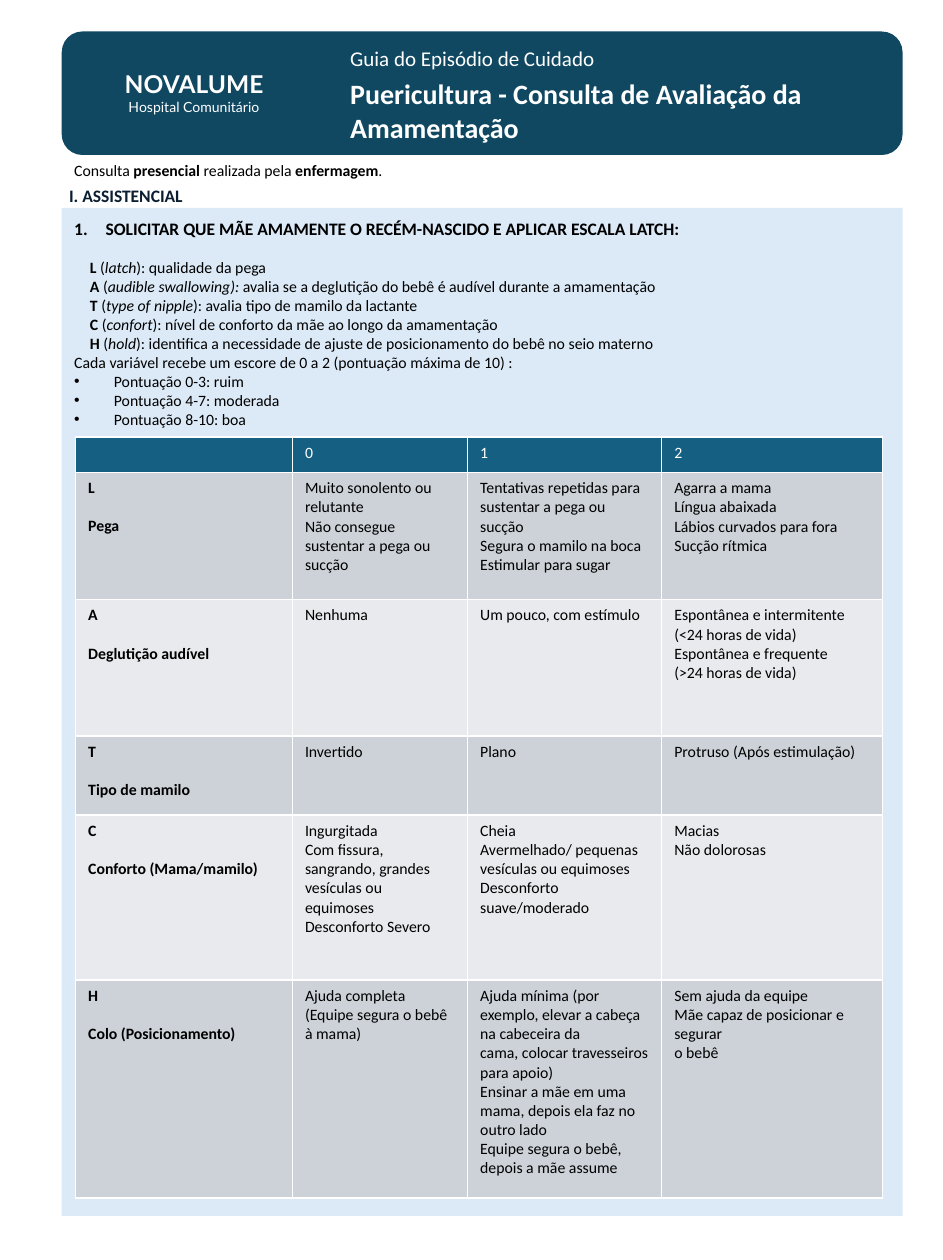
from pptx import Presentation
from pptx import util as u
from pptx.dml.color import RGBColor
from pptx.enum import shapes, text
from pptx.oxml import ns
from lxml import etree

THEME = {
    "panel": "DCEAF7", "banner": "104862", "header": "156082",
    "bands": ("CCD2D8", "E8EAED"),
    "white": "FFFFFF", "black": "000000", "navy": "0B1E31",
    "body_font": "Calibri", "brand_font": "Lato", "bullet_font": "Arial",
    "body": 9, "heading": 10, "guide": 12, "title": 16, "brand": 14, "brand_sub": 8,
}
LINE = 10.8
PAGE = (538.6, 720)

PANEL = (35.28, 118.8, 480.24, 576)
BANNER = (35.28, 18, 480.24, 70.56)

INTRO = [("Consulta ", ""), ("presencial", "b"), (" realizada pela ", ""),
         ("enfermagem", "b"), (".", "")]
STEP = "SOLICITAR QUE MÃE AMAMENTE O RECÉM-NASCIDO E APLICAR ESCALA LATCH:"
LATCH = [
    ("L", "latch", "): qualidade da pega"),
    ("A", "audible swallowing): ",
     "avalia se a deglutição do bebê é audível durante a amamentação"),
    ("T", "type of nipple", "): avalia tipo de mamilo da lactante"),
    ("C", "confort", "): nível de conforto da mãe ao longo da amamentação"),
    ("H", "hold", "): identifica a necessidade de ajuste de posicionamento "
                  "do bebê no seio materno"),
]
SCORING = "Cada variável recebe um escore de 0 a 2 (pontuação máxima de 10) :"
SCORES = ["Pontuação 0-3: ruim", "Pontuação 4-7: moderada", "Pontuação 8-10: boa"]

SCALE_AT = (43.2, 249.84)
SCALE_COLS = [123.84, 100.08, 110.88, 126]
SCALE_ROWS = [20.16, 72.72, 77.76, 45.36, 94.32, 124.56]
SCALE = [
    [[], ["0"], ["1"], ["2"]],
    [["L", "Pega"],
     ["Muito sonolento ou relutante", "Não consegue sustentar a pega ou sucção"],
     ["Tentativas repetidas para sustentar a pega ou sucção",
      "Segura o mamilo na boca", "Estimular para sugar"],
     ["Agarra a mama", "Língua abaixada", "Lábios curvados para fora", "Sucção rítmica"]],
    [["A", "Deglutição audível"],
     ["Nenhuma"],
     ["Um pouco, com estímulo"],
     ["Espontânea e intermitente", "(<24 horas de vida)",
      "Espontânea e frequente", "(>24 horas de vida)"]],
    [["T", "Tipo de mamilo"], ["Invertido"], ["Plano"], ["Protruso (Após estimulação)"]],
    [["C", "Conforto (Mama/mamilo)"],
     ["Ingurgitada", "Com fissura, sangrando, grandes vesículas ou",
      "equimoses", "Desconforto Severo"],
     ["Cheia", "Avermelhado/ pequenas vesículas ou equimoses", "Desconforto suave/moderado"],
     ["Macias", "Não dolorosas"]],
    [["H", "Colo (Posicionamento)"],
     ["Ajuda completa", "(Equipe segura o bebê à mama)"],
     ["Ajuda mínima (por exemplo, elevar a cabeça na cabeceira da",
      "cama, colocar travesseiros para apoio)",
      "Ensinar a mãe em uma mama, depois ela faz no outro lado",
      "Equipe segura o bebê, depois a mãe assume"],
     ["Sem ajuda da equipe", "Mãe capaz de posicionar e segurar", "o bebê"]],
]


def rgb(name):
    return RGBColor.from_string(THEME.get(name, name))


def assign(target, values):
    for key, value in values.items():
        setattr(target, key, value)


def points(values):
    return [u.Pt(value) for value in values]


def add_panel(slide, kind, box, colour):
    panel = slide.shapes.add_shape(kind, *points(box))
    panel.shadow.inherit = False
    panel.fill.solid()
    panel.fill.fore_color.rgb = rgb(colour)
    panel.line.fill.background()


def write(paragraph, runs, size="body", colour="black", font="body_font"):
    for words, style in runs:
        run = paragraph.add_run()
        run.text = words
        assign(run.font, {"name": THEME[font], "size": u.Pt(THEME[size]),
                          "bold": "b" in style, "italic": "i" in style})
        run.font.color.rgb = rgb(colour)


def hang(paragraph, left, first=0, bullet=()):
    props = paragraph._p.get_or_add_pPr()
    props.set("marL", str(u.Pt(left)))
    props.set("indent", str(u.Pt(first)))
    for tag, attribute, value in bullet:
        etree.SubElement(props, ns.qn(tag)).set(attribute, value)


def add_text(slide, box, lines):
    frame = slide.shapes.add_textbox(*points(box)).text_frame
    assign(frame, {"word_wrap": True, "auto_size": text.MSO_AUTO_SIZE.NONE})
    for index, line in enumerate(lines):
        paragraph = frame.add_paragraph() if index else frame.paragraphs[0]
        if "hang" in line:
            hang(paragraph, *line["hang"])
        assign(paragraph, line.get("format", {}))
        write(paragraph, line["runs"], **line.get("look", {}))


def guidance():
    number = [("a:buAutoNum", "type", "arabicPeriod")]
    dot = [("a:buFont", "typeface", THEME["bullet_font"]), ("a:buChar", "char", "•")]
    lines = [{"runs": INTRO},
             {"runs": [(STEP, "b")], "look": {"size": "heading"},
              "hang": (18, -18, number), "format": {"space_before": u.Pt(2 * LINE)}}]
    for index, (letter, term, meaning) in enumerate(LATCH):
        lines.append({"runs": [(letter, "b"), (" (", ""), (term, "i"), (meaning, "")],
                      "hang": (9,),
                      "format": {"space_before": u.Pt(0 if index else LINE)}})
    lines.append({"runs": [(SCORING, "")]})
    lines += [{"runs": [(score, "")], "hang": (22.7, -22.7, dot)} for score in SCORES]
    return lines


def set_borders(cell):
    props = cell._tc.get_or_add_tcPr()
    for index, side in enumerate("LRTB"):
        line = etree.Element(ns.qn("a:ln" + side), w=str(u.Pt(1)))
        fill = etree.SubElement(line, ns.qn("a:solidFill"))
        etree.SubElement(fill, ns.qn("a:srgbClr"), val=THEME["white"])
        props.insert(index, line)


def fill_cell(cell, lines, is_header, is_label, colour):
    cell.fill.solid()
    cell.fill.fore_color.rgb = rgb(colour)
    set_borders(cell)
    frame = cell.text_frame
    for index, words in enumerate(lines):
        paragraph = frame.add_paragraph() if index else frame.paragraphs[0]
        if is_label and index:
            paragraph.space_before = u.Pt(LINE)
        write(paragraph, [(words, "b" if is_label else "")],
              colour="white" if is_header else "black")
    if not lines:
        etree.SubElement(frame.paragraphs[0]._p, ns.qn("a:endParaRPr"),
                         sz=str(THEME["body"] * 100))


def add_scale(slide):
    size = (sum(SCALE_COLS), sum(SCALE_ROWS))
    table = slide.shapes.add_table(len(SCALE_ROWS), len(SCALE_COLS),
                                   *points(SCALE_AT + size)).table
    for column, width in zip(table.columns, SCALE_COLS):
        column.width = u.Pt(width)
    for r, (row, height) in enumerate(zip(SCALE, SCALE_ROWS)):
        table.rows[r].height = u.Pt(height)
        colour = THEME["bands"][(r - 1) % 2] if r else "header"
        for c, lines in enumerate(row):
            fill_cell(table.cell(r, c), lines, r == 0, r > 0 and c == 0, colour)


def main():
    deck = Presentation()
    deck.slide_width, deck.slide_height = points(PAGE)
    slide = deck.slides.add_slide(deck.slide_layouts[6])
    add_panel(slide, shapes.MSO_SHAPE.RECTANGLE, PANEL, "panel")
    add_panel(slide, shapes.MSO_SHAPE.ROUNDED_RECTANGLE, BANNER, "banner")
    add_text(slide, (35.28, 88.56, 502.56, 182.88), guidance())
    add_scale(slide)
    centred = {"alignment": text.PP_ALIGN.CENTER}
    brand = {"colour": "white", "font": "brand_font"}
    add_text(slide, (51.84, 36, 118.08, 33.84), [
        {"runs": [("NOVALUME", "b")], "format": centred, "look": {"size": "brand", **brand}},
        {"runs": [("Hospital Comunitário", "")], "format": centred,
         "look": {"size": "brand_sub", **brand}}])
    add_text(slide, (32.4, 102.24, 482.4, 19.44), [
        {"runs": [("I. ASSISTENCIAL", "b")], "look": {"size": "heading", "colour": "navy"}}])
    add_text(slide, (192.96, 22.32, 187.2, 21.6), [
        {"runs": [("Guia do Episódio de Cuidado", "")],
         "look": {"size": "guide", "colour": "white"}}])
    add_text(slide, (192.96, 40.32, 316.08, 46.08), [
        {"runs": [("Puericultura - Consulta de Avaliação da Amamentação", "b")],
         "look": {"size": "title", "colour": "white"}}])
    deck.save("out.pptx")


if __name__ == "__main__":
    main()
